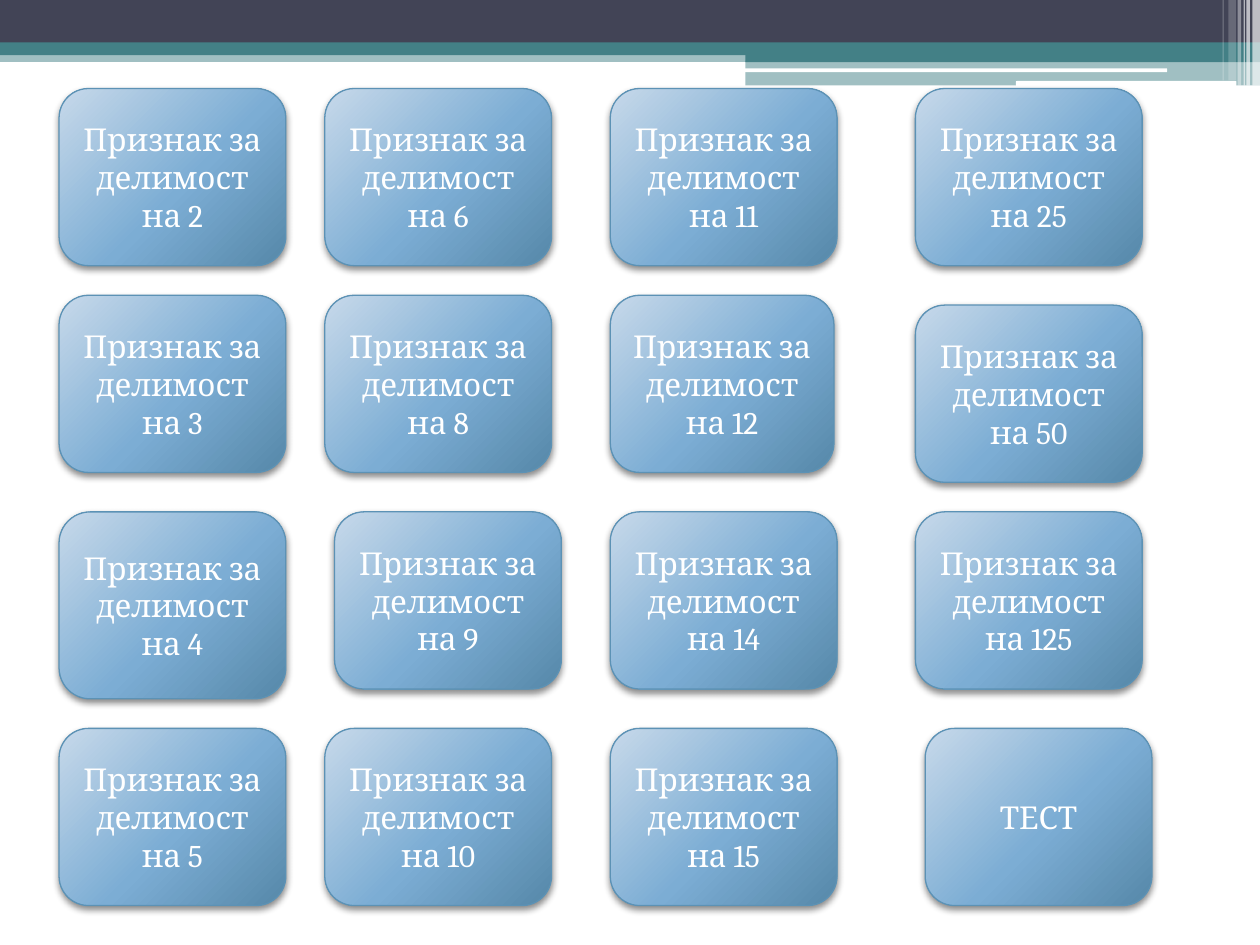
from lxml import etree
from pptx import Presentation
from pptx.dml.color import RGBColor
from pptx.enum.shapes import MSO_SHAPE as Preset
from pptx.enum.text import MSO_ANCHOR as Anchor, PP_ALIGN as Align
from pptx.oxml import parse_xml
from pptx.oxml.ns import nsdecls, qn
from pptx.util import Pt

# Content: columns of buttons, top to bottom
RULE = "Признак за делимост на {}"
TEST = "ТЕСТ"
COLUMNS = [
    [RULE.format(number) for number in (2, 3, 4, 5)],
    [RULE.format(number) for number in (6, 8, 9, 10)],
    [RULE.format(number) for number in (11, 12, 14, 15)],
    [RULE.format(number) for number in (25, 50, 125)] + [TEST],
]

# Colours
WHITE = RGBColor(0xFF, 0xFF, 0xFF)
SLATE = RGBColor(0x42, 0x44, 0x56)
TEAL = RGBColor(0x43, 0x80, 0x86)
EDGE = RGBColor(0x5C, 0x92, 0xB5)
SHADOW = RGBColor(0, 0, 0)
GRADIENT = [(0, RGBColor(0xC7, 0xD9, 0xEA)), (55, RGBColor(0x7C, 0xAD, 0xD4)),
            (100, RGBColor(0x56, 0x88, 0xA9))]

# Button grid, in points
COLUMN_LEFTS = (33.75, 185.6, 348.75, 523.1)
ROW_TOPS = (50.6, 168.75, 292.5, 416.25)
WIDTH, HEIGHT = 129.6, 101.25
STEP = 5.6
# (column, row): change of left, top, width, height
ADJUSTMENTS = {
    (0, 2): (0, 0, 0, STEP),
    (1, 2): (STEP, 0, 0, 0),
    (2, 1): (0, 0, -1.8, 0),
    (3, 1): (0, STEP, 0, 0),
    (3, 3): (STEP, 0, 0, 0),
}

# Header bands: preset, left, top, width, height, colour, opacity in percent
BANDS = [
    (Preset.RECTANGLE, 0, 28.8, 720, 6.6, TEAL, 50),
    (Preset.RECTANGLE, 0, 0, 720, 24.5, SLATE, 100),
    (Preset.RECTANGLE, 0, 24.3, 720, 7.2, TEAL, 100),
    (Preset.RECTANGLE, 426, 28.35, 294, 7.2, TEAL, 100),
    (Preset.RECTANGLE, 426, 34.65, 294, 14.2, TEAL, 50),
    (Preset.ROUNDED_RECTANGLE, 425.7, 39.1, 241.2, 2.16, WHITE, 100),
    (Preset.ROUNDED_RECTANGLE, 580.5, 46.3, 126, 2.88, WHITE, 100),
]
# Vertical stripes: left, width, height, opacity
STRIPES = [(715.6, 4.4, 49, 65), (712.2, 2, 49, 65), (710.7, 0.7, 49, 60),
           (707.2, 2, 49, 40), (702, 4.3, 46, 20), (698.6, 0.7, 46, 30)]
BANDS += [(Preset.RECTANGLE, left, 0, width, height, WHITE, opacity)
          for left, width, height, opacity in STRIPES]


def add_block(page, preset, left, top, width, height):
    box = page.shapes.add_shape(preset, Pt(left), Pt(top), Pt(width), Pt(height))
    box.shadow.inherit = False
    box.fill.solid()
    return box


def add_band(page, preset, left, top, width, height, colour, opacity):
    box = add_block(page, preset, left, top, width, height)
    box.fill.fore_color.rgb = colour
    box.line.fill.background()
    if preset == Preset.ROUNDED_RECTANGLE:
        box.adjustments[0] = 0.17
    if opacity < 100:
        tint = box.fill._xPr.find(qn("a:solidFill"))[0]
        etree.SubElement(tint, qn("a:alpha"), val=str(opacity * 1000))


def add_button(page, text, left, top, width, height):
    box = add_block(page, Preset.ROUNDED_RECTANGLE, left, top, width, height)
    box.line.color.rgb = EDGE
    box.line.width = Pt(0.75)

    # Gradient fill and soft shadow
    properties = box._element.spPr
    stops = "".join(f'<a:gs pos="{place * 1000}"><a:srgbClr val="{colour}"/></a:gs>'
                    for place, colour in GRADIENT)
    gradient = parse_xml(
        f'<a:gradFill {nsdecls("a")} rotWithShape="1"><a:gsLst>{stops}</a:gsLst>'
        '<a:path path="circle"><a:fillToRect l="-40000" t="-90000" r="140000" b="190000"/>'
        '</a:path></a:gradFill>')
    properties.replace(properties.find(qn("a:solidFill")), gradient)
    properties.find(qn("a:effectLst")).append(parse_xml(
        f'<a:outerShdw {nsdecls("a")} blurRad="{Pt(4)}" dist="{Pt(2)}" dir="5400000" '
        f'rotWithShape="0"><a:srgbClr val="{SHADOW}"><a:alpha val="45000"/></a:srgbClr>'
        '</a:outerShdw>'))

    # Label
    frame = box.text_frame
    frame.text = text
    frame.word_wrap = True
    frame.vertical_anchor = Anchor.MIDDLE
    para = frame.paragraphs[0]
    para.alignment = Align.CENTER
    span = para.runs[0]
    span.font.name = "Cambria"
    span.font.size = Pt(18)
    span.font.color.rgb = WHITE


def main():
    deck = Presentation()
    deck.slide_width, deck.slide_height = Pt(720), Pt(540)
    page = deck.slides.add_slide(deck.slide_layouts[6])
    page.background.fill.solid()
    page.background.fill.fore_color.rgb = WHITE

    for band in BANDS:
        add_band(page, *band)

    for column, labels in enumerate(COLUMNS):
        for row, label in enumerate(labels):
            cell = (COLUMN_LEFTS[column], ROW_TOPS[row], WIDTH, HEIGHT)
            change = ADJUSTMENTS.get((column, row), (0, 0, 0, 0))
            add_button(page, label, *(base + extra for base, extra in zip(cell, change)))

    deck.save("out.pptx")


if __name__ == "__main__":
    main()
